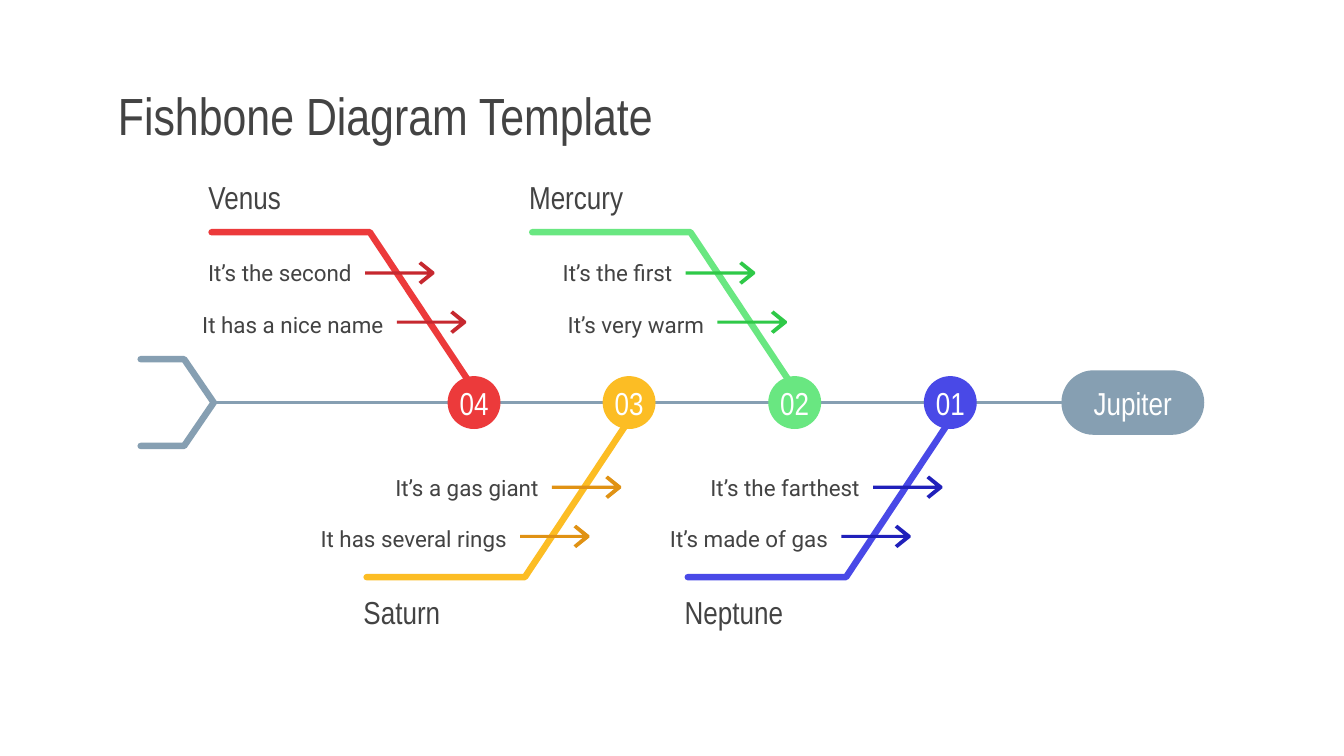
from pptx import Presentation
from pptx.dml.color import RGBColor
from pptx.enum.shapes import MSO_CONNECTOR, MSO_SHAPE
from pptx.enum.text import MSO_ANCHOR, PP_ALIGN
from pptx.oxml.ns import qn
from pptx.util import Cm, Pt
from lxml.etree import SubElement

GREY, INK, WHITE = "869FB2", "434343", "FFFFFF"
AXIS, MID = 7.61, 7.65
FAR, NEAR = (2.06, 2.49), (1.46, 1.56)
BARB = [(0, -0.03), (1.18, -0.03), (1.01, -0.17), (1.06, -0.22), (1.31, -0.02)]
ARROW = BARB + [(x, -y) for x, y in reversed(BARB)]


def color(code):
    return RGBColor.from_string(code)


def write(shape, text, size=17, font="Arial Narrow", ink=INK,
          align=PP_ALIGN.LEFT, side=0.25):
    frame = shape.text_frame
    frame.word_wrap = True
    frame.vertical_anchor = MSO_ANCHOR.MIDDLE
    frame.margin_left = frame.margin_right = Cm(side)
    frame.margin_top = frame.margin_bottom = Cm(0.25)
    para = frame.paragraphs[0]
    para.alignment = align
    run = para.add_run()
    run.text = text
    run.font.size = Pt(size)
    run.font.name = font
    run.font.color.rgb = color(ink)


class Board:
    def __init__(self, slide):
        self.shapes = slide.shapes
        self.bone = 3.5
        self.thin = 1.75

    def text(self, text, left, top, width, height, **style):
        box = self.shapes.add_textbox(Cm(left), Cm(top), Cm(width), Cm(height))
        write(box, text, **style)

    def paint(self, shape, fill):
        shape.shadow.inherit = False
        shape.fill.solid()
        shape.fill.fore_color.rgb = color(fill)
        shape.line.fill.background()

    def badge(self, kind, text, fill, left, top, width, height, side=0.25):
        shape = self.shapes.add_shape(
            kind, Cm(left), Cm(top), Cm(width), Cm(height))
        self.paint(shape, fill)
        write(shape, text, ink=WHITE, align=PP_ALIGN.CENTER, side=side)
        return shape

    def stroke(self, shape, code, width):
        shape.line.color.rgb = color(code)
        shape.line.width = Pt(width)
        line = shape._element.spPr.find(qn("a:ln"))
        line.set("cap", "rnd")
        SubElement(line, qn("a:round"))

    def trace(self, points, close):
        spots = [(Cm(x), Cm(y)) for x, y in points]
        maker = self.shapes.build_freeform(*spots[0])
        maker.add_line_segments(spots[1:], close=close)
        return maker.convert_to_shape()

    def bend(self, code, points):
        shape = self.trace(points, False)
        shape.shadow.inherit = False
        shape.fill.background()
        self.stroke(shape, code, self.bone)

    def arrow(self, code, left, mid):
        points = [(left + x, mid + y) for x, y in ARROW]
        self.paint(self.trace(points, True), code)

    def line(self, code, left, right, y):
        link = self.shapes.add_connector(
            MSO_CONNECTOR.STRAIGHT, Cm(left), Cm(y), Cm(right), Cm(y))
        self.stroke(link, code, self.thin)
        SubElement(link._element.spPr, qn("a:effectLst"))
        return link

    def branch(self, number, name, notes, x, way, fill, dark):
        edge = MID + way * 3.26
        self.bend(fill, [(x - 4.96, edge), (x - 1.97, edge),
                         (x, MID + way * 0.29)])
        slots = (FAR, NEAR) if way < 0 else (NEAR, FAR)
        for row, (note, (back, rise)) in enumerate(zip(notes, slots)):
            left, y = x - back, MID + way * rise
            self.arrow(dark, left, y)
            self.text(note, left - 4.14, y - 0.37 + row * 0.04, 4.14, 0.74,
                      size=12, font="Roboto", align=PP_ALIGN.RIGHT)
        self.badge(MSO_SHAPE.OVAL, number, fill, x - 0.5, AXIS - 0.5, 1, 1,
                   side=0)
        self.text(name, x - 5.27, MID + way * 3.92 - 0.6, 3.33, 1.2)


def main():
    deck = Presentation()
    deck.slide_width, deck.slide_height = Cm(25.4), Cm(14.29)
    board = Board(deck.slides.add_slide(deck.slide_layouts[6]))
    spine = board.line(GREY, 4.04, 20.06, AXIS)
    board.bend(GREY, [(2.66, AXIS - 0.82), (3.48, AXIS - 0.82), (4.04, AXIS),
                      (3.48, AXIS + 0.82), (2.66, AXIS + 0.82)])
    head = board.badge(MSO_SHAPE.ROUNDED_RECTANGLE, "Jupiter", GREY,
                       20.06, AXIS - 0.61, 2.7, 1.22)
    head.adjustments[0] = 0.5
    spine.end_connect(head, 1)
    board.text("Fishbone Diagram Template", 1.98, 1.5, 21.46, 1.35, size=28)
    branches = [
        ("04", "Venus", ("It’s the second", "It has a nice name"),
         8.96, -1, "EC3A3B", "C6282F"),
        ("02", "Mercury", ("It’s the first", "It’s very warm"),
         15.02, -1, "69E781", "2FC948"),
        ("03", "Saturn", ("It’s a gas giant", "It has several rings"),
         11.89, 1, "FCBD24", "E09214"),
        ("01", "Neptune", ("It’s the farthest", "It’s made of gas"),
         17.96, 1, "4949E7", "2020BA"),
    ]
    for branch in branches:
        board.branch(*branch)
    deck.save("out.pptx")


if __name__ == "__main__":
    main()
